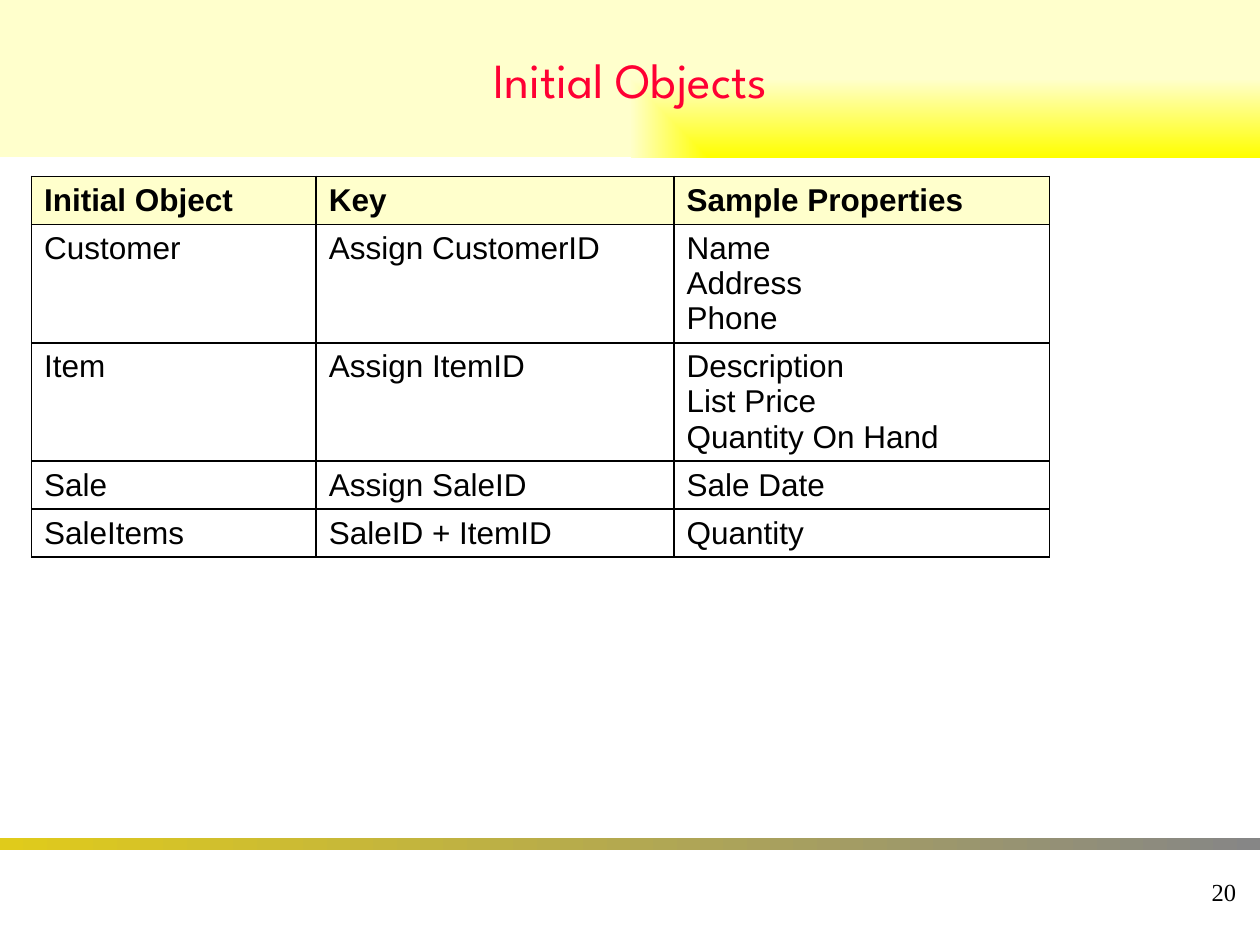
import collections
import lxml.etree
import pptx
import pptx.dml.color
import pptx.enum.shapes
import pptx.enum.text
import pptx.oxml.ns
import pptx.util

Inches = pptx.util.Inches
Align = pptx.enum.text.PP_ALIGN
Anchor = pptx.enum.text.MSO_ANCHOR
qn = pptx.oxml.ns.qn
rgb = pptx.dml.color.RGBColor.from_string

Theme = collections.namedtuple(
    "Theme", "red black cream yellow gold gray head body small")
theme = Theme(red="FF0033", black="000000", cream="FFFFCC", yellow="FFFF00",
              gold="E0CB1B", gray="868686", head=28, body=18, small=14)


def put(frame, text, size=theme.body, font="Arial", color=theme.black,
        bold=False, align=Align.LEFT):
    """Fill a text frame, one paragraph for each line of text."""
    frame.text = text
    for para in frame.paragraphs:
        para.alignment = align
        face = para.runs[0].font
        face.name, face.size, face.bold = font, pptx.util.Pt(size), bold
        face.color.rgb = rgb(color)


def band(top, height, start, end):
    """Add a full-width bar that blends two colors."""
    bar = slide.shapes.add_shape(
        pptx.enum.shapes.MSO_SHAPE.RECTANGLE,
        0, Inches(top), deck.slide_width, Inches(height))
    bar.shadow.inherit = False
    bar.line.fill.background()
    bar.fill.gradient()
    bar.fill.gradient_angle = 0
    for stop, color in zip(bar.fill.gradient_stops, (start, end)):
        stop.color.rgb = rgb(color)
    return bar


deck = pptx.Presentation()
deck.slide_width, deck.slide_height = Inches(10), Inches(7.5)
slide = deck.slides.add_slide(deck.slide_layouts[6])

# Footer bar
band(6.65, 0.1, theme.gold, theme.gray)

# Title band, with its blend starting from the lower right corner
title = band(0, 1.25, theme.yellow, theme.cream)
grad = title.fill._xPr.find(qn("a:gradFill"))
grad.remove(grad.find(qn("a:lin")))
blend = lxml.etree.SubElement(grad, qn("a:path"), path="rect")
lxml.etree.SubElement(blend, qn("a:fillToRect"), l="100000", t="100000")
title.text_frame.vertical_anchor = Anchor.MIDDLE
put(title.text_frame, "Initial Objects", size=theme.head,
    font="League Spartan", color=theme.red, align=Align.CENTER)

# Table of objects
rows = [
    ("Initial Object", "Key", "Sample Properties"),
    ("Customer", "Assign CustomerID", "Name\nAddress\nPhone"),
    ("Item", "Assign ItemID", "Description\nList Price\nQuantity On Hand"),
    ("Sale", "Assign SaleID", "Sale Date"),
    ("SaleItems", "SaleID + ItemID", "Quantity"),
]
widths = [2.26, 2.84, 2.98]
lines = [row[-1].count("\n") + 1 for row in rows]
heights = [0.1 + 0.28 * count for count in lines]
grid = slide.shapes.add_table(
    len(rows), len(widths), Inches(0.25), Inches(1.4),
    Inches(sum(widths)), Inches(sum(heights))).table
for col, width in zip(grid.columns, widths):
    col.width = Inches(width)
for r, row in enumerate(rows):
    grid.rows[r].height = Inches(heights[r])
    for c, text in enumerate(row):
        cell = grid.cell(r, c)
        put(cell.text_frame, text, bold=r == 0)
        # Borders come before the fill in the cell properties
        props = cell._tc.get_or_add_tcPr()
        for side in "LRTB":
            edge = lxml.etree.SubElement(
                props, qn("a:ln" + side), w=str(pptx.util.Pt(1)))
            paint = lxml.etree.SubElement(edge, qn("a:solidFill"))
            lxml.etree.SubElement(paint, qn("a:srgbClr"), val=theme.black)
        if r == 0:
            cell.fill.solid()
            cell.fill.fore_color.rgb = rgb(theme.cream)
        else:
            cell.fill.background()

# Page number
page = slide.shapes.add_textbox(
    Inches(7.83), Inches(6.83), Inches(2.08), Inches(0.5)).text_frame
page.word_wrap = True
page.vertical_anchor = Anchor.MIDDLE
put(page, "20", size=theme.small, font="Times New Roman", align=Align.RIGHT)

deck.save("out.pptx")
